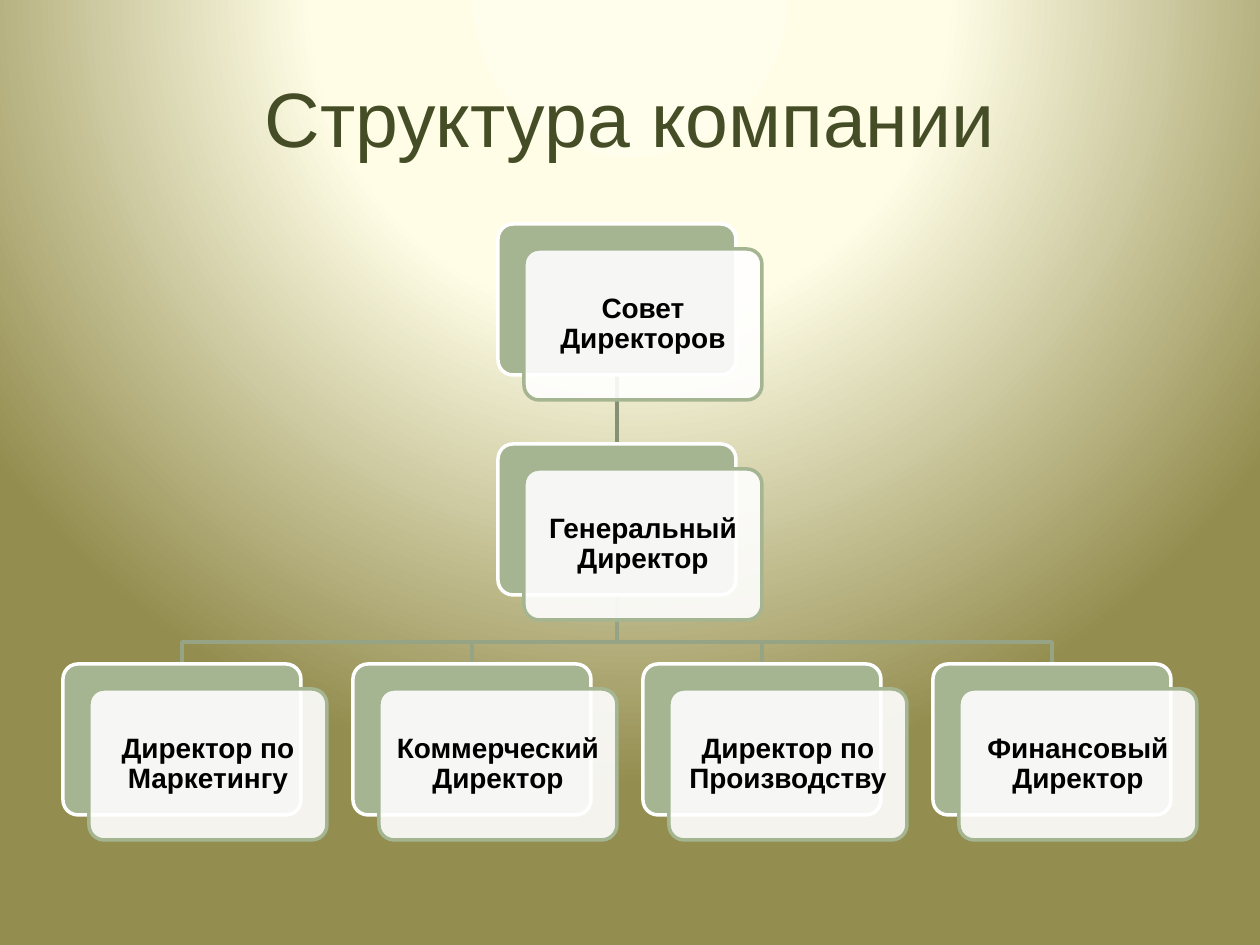
"""Builds the company structure slide: a title above a three-level organisation chart."""
from dataclasses import dataclass

from lxml import etree
from pptx import Presentation
from pptx.dml.color import RGBColor
from pptx.enum.shapes import MSO_CONNECTOR, MSO_SHAPE
from pptx.enum.text import MSO_ANCHOR, PP_ALIGN
from pptx.oxml import parse_xml
from pptx.oxml.ns import nsdecls, qn
from pptx.util import Pt

ROUNDED = MSO_SHAPE.ROUNDED_RECTANGLE
STRAIGHT = MSO_CONNECTOR.STRAIGHT
MIDDLE = MSO_ANCHOR.MIDDLE
CENTER = PP_ALIGN.CENTER
BOTTOM_SITE, TOP_SITE = 2, 0

SCALE = 914400 / 126
SLIDE_W, SLIDE_H = 1260, 945
CARD_W, CARD_H = 238, 151
SHIFT_X, SHIFT_Y = 26, 25
FIRST_X, COLUMN_STEP = 63, 290
FIRST_Y, ROW_STEP = 224, 220
BRANCH_Y = 642

BOARD = "Совет Директоров"
CHIEF = "Генеральный Директор"
DIRECTORS = ["Директор по Маркетингу", "Коммерческий Директор",
             "Директор по Производству", "Финансовый Директор"]


@dataclass(frozen=True)
class Theme:
    font: str = "Arial"
    title_color: str = "444D26"
    text_color: str = "000000"
    card: str = "A5B592"
    white: str = "FFFFFF"
    trunk: str = "849175"
    branch: str = "96A485"
    backdrop: tuple = ((0, "FFFDEB"), (40, "FFFDE6"), (100, "938D4F"))
    title_size: int = 44
    card_size: int = 16
    line_width: int = 2
    card_opacity: int = 90


def px(length):
    return round(length * SCALE)


class OrgSlide:
    def __init__(self, deck, theme):
        self.theme = theme
        self.slide = deck.slides.add_slide(deck.slide_layouts[5])

    def backdrop(self):
        fill = self.slide.background.fill
        fill.solid()
        solid = self.slide.element.find(".//" + qn("p:bgPr")).find(qn("a:solidFill"))
        stops = "".join(f'<a:gs pos="{pos * 1000}"><a:srgbClr val="{color}"/></a:gs>'
                        for pos, color in self.theme.backdrop)
        gradient = parse_xml(
            f'<a:gradFill {nsdecls("a")} rotWithShape="1"><a:gsLst>{stops}</a:gsLst>'
            '<a:path path="circle"><a:fillToRect l="50000" t="-80000" r="50000" b="180000"/>'
            '</a:path></a:gradFill>')
        solid.getparent().replace(solid, gradient)

    def label(self, frame, text, size, color, bold=False):
        frame.word_wrap = True
        frame.vertical_anchor = MIDDLE
        frame.text = text
        paragraph = frame.paragraphs[0]
        paragraph.alignment = CENTER
        font = paragraph.font
        font.name, font.size, font.bold = self.theme.font, Pt(size), bold
        font.color.rgb = RGBColor.from_string(color)
        return paragraph

    def stroke(self, line, color):
        line.color.rgb = RGBColor.from_string(color)
        line.width = Pt(self.theme.line_width)

    def title(self, text, x, y, w, h):
        heading = self.slide.shapes.title
        heading.left, heading.top, heading.width, heading.height = map(px, (x, y, w, h))
        self.label(heading.text_frame, text, self.theme.title_size, self.theme.title_color)

    def panel(self, x, y, fill, outline):
        panel = self.slide.shapes.add_shape(ROUNDED, *map(px, (x, y, CARD_W, CARD_H)))
        panel.adjustments[0] = 0.1
        panel.shadow.inherit = False
        panel.fill.solid()
        panel.fill.fore_color.rgb = RGBColor.from_string(fill)
        self.stroke(panel.line, outline)
        return panel

    def card(self, text, x, y):
        theme = self.theme
        back = self.panel(x, y, theme.card, theme.white)
        front = self.panel(x + SHIFT_X, y + SHIFT_Y, theme.white, theme.card)
        tint = front.element.spPr.find(qn("a:solidFill")).find(qn("a:srgbClr"))
        etree.SubElement(tint, qn("a:alpha"), val=str(theme.card_opacity * 1000))
        frame = front.text_frame
        frame.margin_left = frame.margin_right = px(9)
        frame.margin_top = frame.margin_bottom = px(9)
        position = self.label(frame, text, theme.card_size, theme.text_color, bold=True)
        position.line_spacing = 0.9
        return back

    def trunk(self, x, top, bottom):
        trunk = self.slide.shapes.add_connector(STRAIGHT, *map(px, (x, top, x, bottom)))
        self.stroke(trunk.line, self.theme.trunk)
        etree.SubElement(trunk.element.spPr, qn("a:effectLst"))
        return trunk

    def branch(self, start_x, start_y, end_x, end_y):
        builder = self.slide.shapes.build_freeform(start_x, start_y, SCALE)
        builder.add_line_segments(
            [(start_x, BRANCH_Y), (end_x, BRANCH_Y), (end_x, end_y)], close=False)
        branch = builder.convert_to_shape()
        branch.fill.background()
        branch.shadow.inherit = False
        self.stroke(branch.line, self.theme.branch)


def main():
    deck = Presentation()
    deck.slide_width, deck.slide_height = px(SLIDE_W), px(SLIDE_H)
    chart = OrgSlide(deck, Theme())
    chart.backdrop()
    chart.title("Структура компании", 63, 38, 1134, 157)

    columns = [FIRST_X + i * COLUMN_STEP for i in range(len(DIRECTORS))]
    board_y, chief_y, directors_y = (FIRST_Y + i * ROW_STEP for i in range(3))
    top_x = (columns[0] + columns[-1]) // 2
    half = CARD_W // 2

    for column in columns:
        chart.branch(top_x + half, chief_y + CARD_H, column + half, directors_y)
    trunk = chart.trunk(top_x + half, board_y + CARD_H, chief_y)
    board = chart.card(BOARD, top_x, board_y)
    chief = chart.card(CHIEF, top_x, chief_y)
    trunk.begin_connect(board, BOTTOM_SITE)
    trunk.end_connect(chief, TOP_SITE)
    for director, column in zip(DIRECTORS, columns):
        chart.card(director, column, directors_y)

    deck.save("out.pptx")


if __name__ == "__main__":
    main()
